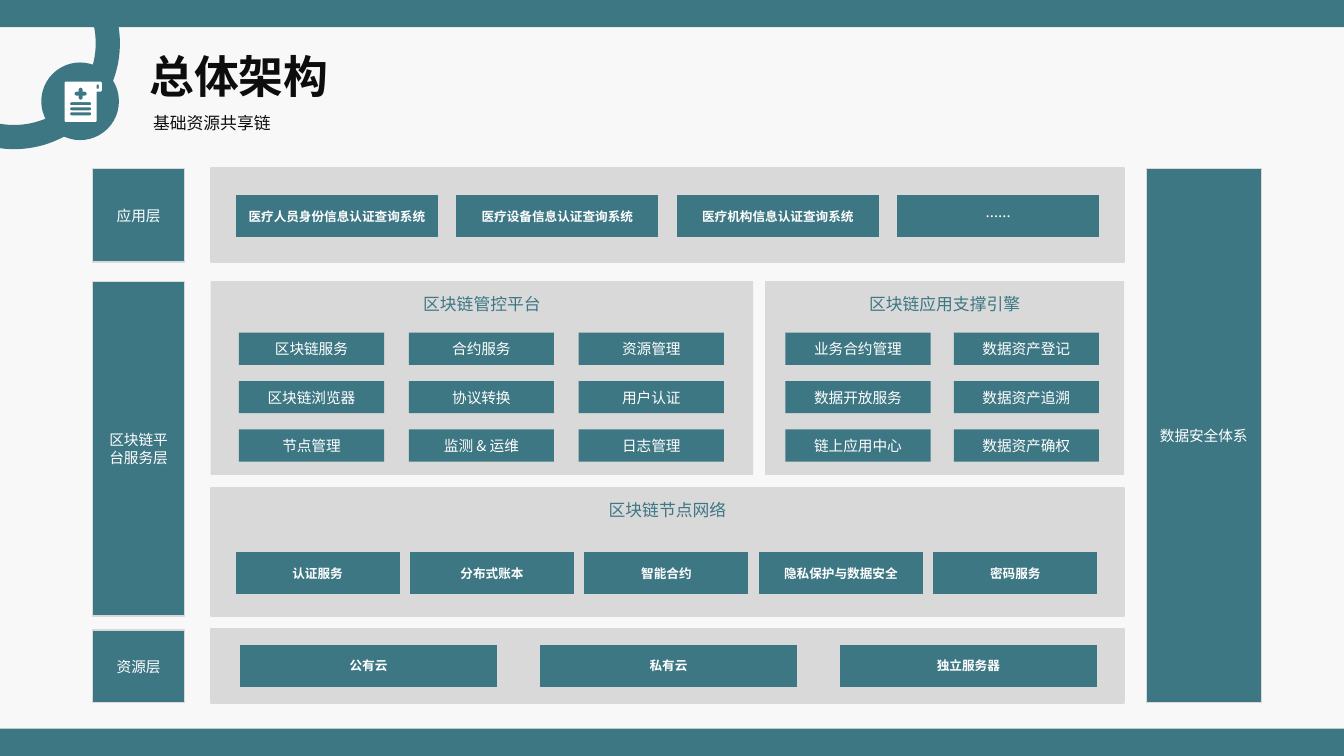
from math import cos, radians, sin

from lxml.etree import SubElement
from pptx import Presentation
from pptx.dml.color import RGBColor
from pptx.enum.shapes import MSO_SHAPE
from pptx.enum.text import MSO_ANCHOR as Anchor, MSO_AUTO_SIZE as AutoSize, PP_ALIGN as Align
from pptx.oxml.ns import qn
from pptx.util import Inches, Pt

FONT = "Noto Sans CJK SC"
COLORS = {"teal": "3D7784", "panel": "D9D9D9", "page": "F8F8F8", "white": "FFFFFF", "ink": "0D0D0D"}

TITLE = "总体架构"
SUBTITLE = "基础资源共享链"
BANDS = [(0, 0, 13.33, 0.27), (0, 7.23, 13.33, 0.27)]
LAYERS = [
    ("应用层", (0.92, 1.67, 0.91, 0.93)),
    ("区块链平台服务层", (0.92, 2.79, 0.91, 3.32)),
    ("资源层", (0.92, 6.25, 0.91, 0.72)),
    ("数据安全体系", (11.37, 1.67, 1.14, 5.3)),
]
BAR = {"outline": 1.5, "chip_outline": 1, "chip_height": 0.43, "text": {"size": Pt(9), "bold": True}}
GRID = {"outline": 0, "chip_outline": 0, "chip_height": 0.32, "text": {"size": Pt(10.5), "bold": False}}
PANELS = [
    {"style": BAR, "box": (2.09, 1.67, 9.06, 0.93), "heading": "",
     "span": (2.33, 10.91), "top": 1.93, "chip_width": 2.02,
     "rows": [["医疗人员身份信息认证查询系统", "医疗设备信息认证查询系统", "医疗机构信息认证查询系统", "……"]]},
    {"style": GRID, "box": (2.09, 2.79, 5.38, 1.92), "heading": "区块链管控平台",
     "span": (2.37, 7.18), "top": 3.3, "chip_width": 1.44,
     "rows": [["区块链服务", "合约服务", "资源管理"],
              ["区块链浏览器", "协议转换", "用户认证"],
              ["节点管理", "监测 & 运维", "日志管理"]]},
    {"style": GRID, "box": (7.59, 2.79, 3.56, 1.92), "heading": "区块链应用支撑引擎",
     "span": (7.79, 10.9), "top": 3.3, "chip_width": 1.44,
     "rows": [["业务合约管理", "数据资产登记"],
              ["数据开放服务", "数据资产追溯"],
              ["链上应用中心", "数据资产确权"]]},
    {"style": BAR, "box": (2.09, 4.84, 9.06, 1.27), "heading": "区块链节点网络",
     "span": (2.33, 10.89), "top": 5.47, "chip_width": 1.64,
     "rows": [["认证服务", "分布式账本", "智能合约", "隐私保护与数据安全", "密码服务"]]},
    {"style": BAR, "box": (2.09, 6.24, 9.06, 0.73), "heading": "",
     "span": (2.37, 10.89), "top": 6.39, "chip_width": 2.57,
     "rows": [["公有云", "私有云", "独立服务器"]]},
]
ROW_STEP = 0.48
PAPER = [(0.65, 0.81), (1, 0.81), (1.01, 0.82), (1.01, 0.9), (1, 0.91), (0.96, 0.91),
         (0.96, 1.2), (0.95, 1.21), (0.65, 1.21), (0.64, 1.2), (0.64, 0.82)]
PAPER_FOLD = [(0.96, 0.84), (0.98, 0.84), (0.98, 0.88), (0.96, 0.88)]
TEXT_LINE_CENTERS = [1.03, 1.08, 1.13]

prs = Presentation()
prs.slide_width, prs.slide_height = Inches(13.33), Inches(7.5)
slide = prs.slides.add_slide(prs.slide_layouts[5])


def rgb(name):
    return RGBColor.from_string(COLORS[name])


def paint(shape, fill, outline=0):
    shape.shadow.inherit = False
    shape.fill.solid()
    shape.fill.fore_color.rgb = rgb(fill)
    if outline:
        shape.line.color.rgb = rgb("panel")
        shape.line.width = Pt(outline)
    else:
        shape.line.fill.background()


def write(shape, words, color, font, align=Align.CENTER, **frame_format):
    frame = shape.text_frame
    for key, value in {"word_wrap": True, **frame_format}.items():
        setattr(frame, key, value)
    paragraph = frame.paragraphs[0]
    paragraph.alignment = align
    run = paragraph.add_run()
    run.text = words
    for key, value in {"name": FONT, **font}.items():
        setattr(run.font, key, value)
    run.font.color.rgb = rgb(color)
    SubElement(run.font._element, qn("a:ea"), typeface=FONT)


def block(box, fill, outline=0, kind=MSO_SHAPE.RECTANGLE):
    shape = slide.shapes.add_shape(kind, *map(Inches, box))
    paint(shape, fill, outline)
    return shape


def arc(x, y, radius, start, end, steps=8):
    angles = [radians(start + (end - start) * i / steps) for i in range(steps + 1)]
    return [(x + radius * cos(a), y + radius * sin(a)) for a in angles]


def outline_shape(contours, fill):
    builder = None
    for contour in contours:
        first, *rest = [(Inches(x), Inches(y)) for x, y in contour]
        if builder is None:
            builder = slide.shapes.build_freeform(*first, scale=1.0)
        else:
            builder.move_to(*first)
        builder.add_line_segments(rest, close=True)
    paint(builder.convert_to_shape(), fill)


def medical_cross(x, y, reach=0.04, half=0.02):
    points = []
    for turn in (0, 90, 180, 270):
        c, s = cos(radians(turn)), sin(radians(turn))
        points += arc(x + reach * c, y + reach * s, half, turn - 90, turn + 90)
        points.append((x + half * (c - s), y + half * (s + c)))
    return points


def draw_emblem():
    ring = arc(0.14, 0.43, 1.05, -8.8, 97.7, 40) + arc(0.14, 0.43, 0.81, 100, -11.4, 40)
    outline_shape([ring], "teal")
    block((0.41, 0.62, 0.77, 0.77), "teal", kind=MSO_SHAPE.OVAL)
    text_lines = [arc(0.71, y, 0.015, 90, 270) + arc(0.89, y, 0.015, -90, 90)
                  for y in TEXT_LINE_CENTERS]
    outline_shape([PAPER, PAPER_FOLD, medical_cross(0.8, 0.93), *text_lines], "white")


def draw_panel(panel):
    style = panel["style"]
    backdrop = block(panel["box"], "panel", style["outline"])
    if panel["heading"]:
        write(backdrop, panel["heading"], "teal", {"size": Pt(12)},
              vertical_anchor=Anchor.TOP, margin_top=Inches(0.12))
    left, right = panel["span"]
    width = panel["chip_width"]
    for r, row in enumerate(panel["rows"]):
        step = (right - left - width) / (len(row) - 1)
        for c, words in enumerate(row):
            box = (left + c * step, panel["top"] + r * ROW_STEP, width, style["chip_height"])
            chip = block(box, "teal", style["chip_outline"])
            write(chip, words, "white", style["text"], vertical_anchor=Anchor.MIDDLE)


slide.background.fill.solid()
slide.background.fill.fore_color.rgb = rgb("page")
draw_emblem()
for band in BANDS:
    block(band, "teal")

title = slide.shapes.title
for side, length in zip(("left", "top", "width", "height"), (1.38, 0.43, 2, 0.64)):
    setattr(title, side, Inches(length))
write(title, TITLE, "ink", {"size": Pt(32), "bold": True}, Align.LEFT,
      word_wrap=False, auto_size=AutoSize.NONE, vertical_anchor=Anchor.TOP)
subtitle = slide.shapes.add_textbox(*map(Inches, (1.42, 1.07, 2.55, 0.3)))
write(subtitle, SUBTITLE, "ink", {"size": Pt(12)}, Align.JUSTIFY)

for panel in PANELS:
    draw_panel(panel)
for words, box in LAYERS:
    write(block(box, "teal", 1), words, "white", {"size": Pt(10.5)}, vertical_anchor=Anchor.MIDDLE)

prs.save("out.pptx")
